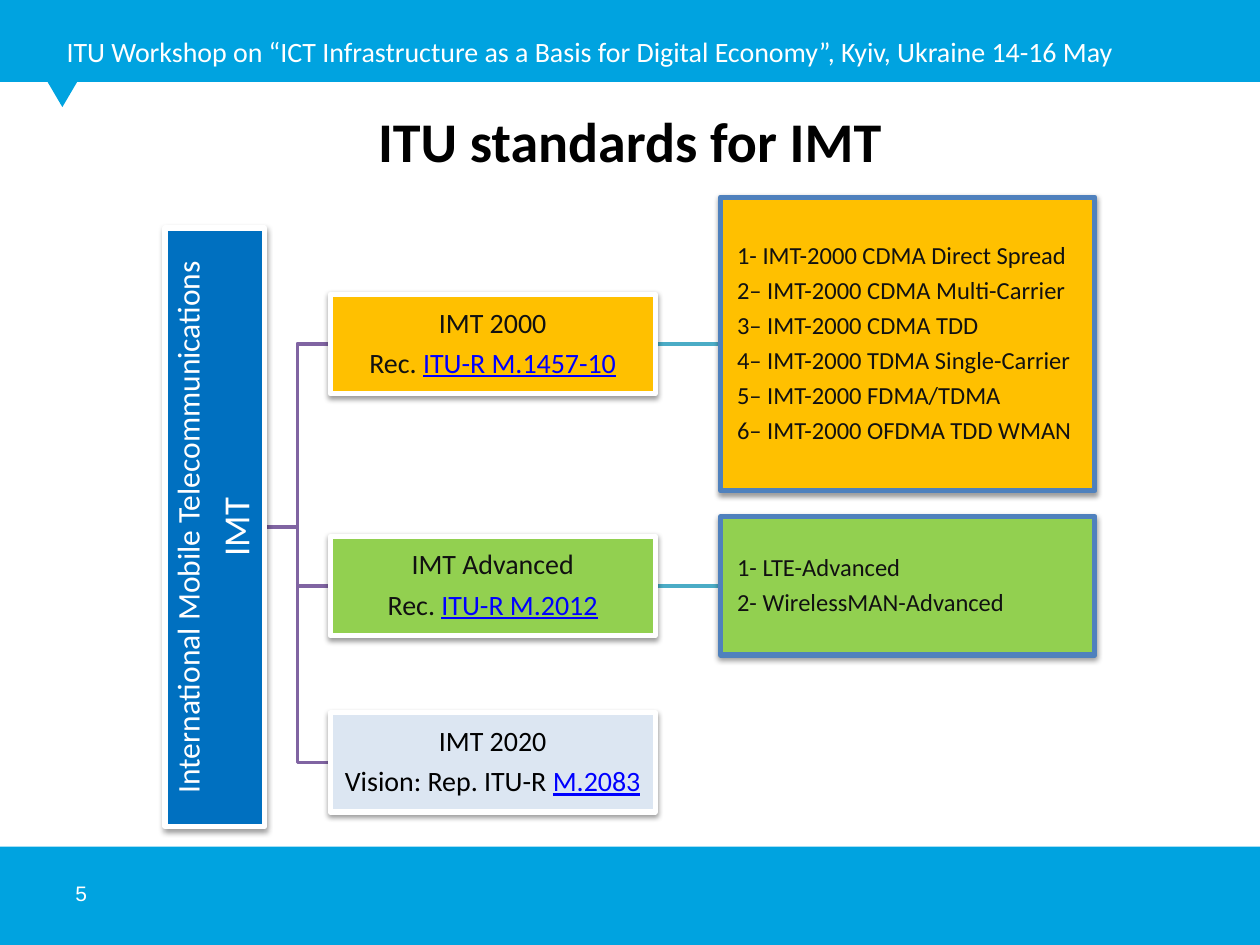
from lxml import etree
from pptx import Presentation
from pptx.dml.color import RGBColor
from pptx.enum.shapes import MSO_CONNECTOR, MSO_SHAPE
from pptx.enum.text import MSO_ANCHOR, PP_ALIGN
from pptx.oxml.ns import qn
from pptx.util import Inches, Pt

RECT, TRI = MSO_SHAPE.RECTANGLE, MSO_SHAPE.ISOSCELES_TRIANGLE
ELBOW, LINE = MSO_CONNECTOR.ELBOW, MSO_CONNECTOR.STRAIGHT
LEFT, MID = PP_ALIGN.LEFT, PP_ALIGN.CENTER
WIDE, HIGH = Inches(10), Inches(7.5)
COL, ROW = WIDE / 100, HIGH / 75
HUE = {
    "band": "00A3E0", "root": "0070C0", "gold": "FFC000", "green": "92D050",
    "pale": "DCE6F2", "edge": "4F81BD", "white": "FFFFFF", "black": "000000",
    "ink": "111111", "link": "0000FF", "stem": "8064A2", "join": "4BACC6",
}
NODE_X, NODE_W, NODE_H = 26.2, 25.8, 7.9
LIST_X, LIST_W = 57.2, 29.7
ROOT_X, ROOT_Y = 17.05, 41.85


def tint(key):
    return RGBColor.from_string(HUE[key])


def grid(x, y, w, h):
    return [round(n) for n in (x * COL, y * ROW, w * COL, h * ROW)]


def write(shape, lines, size=16, color="ink", font="Calibri", bold=False,
          align=LEFT, inset=None, indent=0, tight=False):
    frame = shape.text_frame
    frame.word_wrap = True
    frame.vertical_anchor = MSO_ANCHOR.MIDDLE
    if inset is not None:
        frame.margin_left = frame.margin_right = Inches(inset)
        frame.margin_top = frame.margin_bottom = Inches(inset)
    for i, line in enumerate(lines):
        para = frame.paragraphs[0] if i == 0 else frame.add_paragraph()
        para.alignment = align
        text, link, pts = line if isinstance(line, tuple) else (line, "", size)
        if indent:
            para._p.get_or_add_pPr().set("marL", str(Inches(indent)))
        if tight:
            para.line_spacing = 0.9
            para.space_after = Pt(round(0.35 * pts, 1))
        for part, key in ((text, color), (link, "link")):
            if part:
                run = para.add_run()
                run.text = part
                run.font.name, run.font.size = font, Pt(pts)
                run.font.bold = bold
                run.font.color.rgb = tint(key)
                run.font.underline = key == "link"


def block(slide, kind, area, fill):
    shape = slide.shapes.add_shape(kind, *grid(*area))
    shape.shadow.inherit = False
    shape.fill.solid()
    shape.fill.fore_color.rgb = tint(fill)
    shape.line.fill.background()
    return shape


def label(slide, area, text, **form):
    write(slide.shapes.add_textbox(*grid(*area)), [text], **form)


def shade(shape):
    fx = shape._element.spPr.find(qn("a:effectLst"))
    cast = etree.SubElement(fx, qn("a:outerShdw"), blurRad=str(Pt(3.1)),
                            dist=str(Pt(1.6)), dir="5400000", rotWithShape="0")
    hue = etree.SubElement(cast, qn("a:srgbClr"), val=HUE["black"])
    etree.SubElement(hue, qn("a:alpha"), val="38000")


def card(slide, area, fill, lines, edge="white", turn=0, **form):
    shape = block(slide, RECT, area, fill)
    shape.rotation = turn
    shape.line.color.rgb = tint(edge)
    shape.line.width = Pt(3)
    shade(shape)
    write(shape, lines, inset=0.01, tight=True, **form)


def link(slide, kind, start, end, color):
    ends = [round(n) for x, y in (start, end) for n in (x * COL, y * ROW)]
    wire = slide.shapes.add_connector(kind, *ends)
    wire.line.color.rgb = tint(color)
    wire.line.width = Pt(2)
    etree.SubElement(wire._element.spPr, qn("a:effectLst"))


def frame(slide):
    block(slide, RECT, (0, -0.1, 100, 6.6), "band")
    block(slide, RECT, (0, 67.2, 100, 7.8), "band")
    label(slide, (4.3, 1.8, 90, 4.5),
          "ITU Workshop on “ICT Infrastructure as a Basis for Digital "
          "Economy”, Kyiv, Ukraine 14-16 May", color="white")
    block(slide, TRI, (3.6, 6.2, 2.7, 2.3), "band").rotation = 180
    label(slide, (5, 68.9, 23.3, 4), "5", size=12, color="white", font="Arial")
    title = slide.shapes.title
    title.left, title.top, title.width, title.height = grid(1.4, 7.6, 97.2, 7.1)
    write(title, ["ITU standards for IMT"], size=32, color="black",
          bold=True, align=MID)


def tree(slide):
    rows = [
        (27.3, "gold", "ink", "IMT 2000", ("Rec. ", "ITU-R M.1457-10", 16), 23.3,
         ["1- IMT-2000 CDMA Direct Spread", "2– IMT-2000 CDMA Multi-Carrier",
          "3– IMT-2000 CDMA TDD", "4– IMT-2000 TDMA Single-Carrier",
          "5– IMT-2000 FDMA/TDMA", "6– IMT-2000 OFDMA TDD WMAN"]),
        (46.5, "green", "ink", "IMT Advanced", ("Rec. ", "ITU-R M.2012", 16), 11,
         ["1- LTE-Advanced", "2- WirelessMAN-Advanced"]),
        (60.5, "pale", "black", "IMT 2020",
         ("Vision: Rep. ITU-R ", "M.2083", 16), 0, []),
    ]
    for y, _, _, _, _, _, items in rows:
        link(slide, ELBOW, (ROOT_X + NODE_H / 2, ROOT_Y), (NODE_X, y), "stem")
        if items:
            link(slide, LINE, (NODE_X + NODE_W, y), (LIST_X, y), "join")
    long = 47.5
    card(slide, (ROOT_X - long / 2, ROOT_Y - NODE_H / 2, long, NODE_H), "root",
         ["International Mobile Telecommunications", ("IMT", "", 21)],
         turn=270, size=18, color="white", align=MID)
    for y, fill, ink, name, source, tall, items in rows:
        card(slide, (NODE_X, y - NODE_H / 2, NODE_W, NODE_H), fill,
             [name, source], color=ink, align=MID)
        if items:
            card(slide, (LIST_X, y - tall / 2, LIST_W, tall), fill, items,
                 edge="edge", size=14, indent=0.12)


def main():
    deck = Presentation()
    deck.slide_width, deck.slide_height = WIDE, HIGH
    slide = deck.slides.add_slide(deck.slide_layouts[5])
    frame(slide)
    tree(slide)
    deck.save("out.pptx")


if __name__ == "__main__":
    main()
